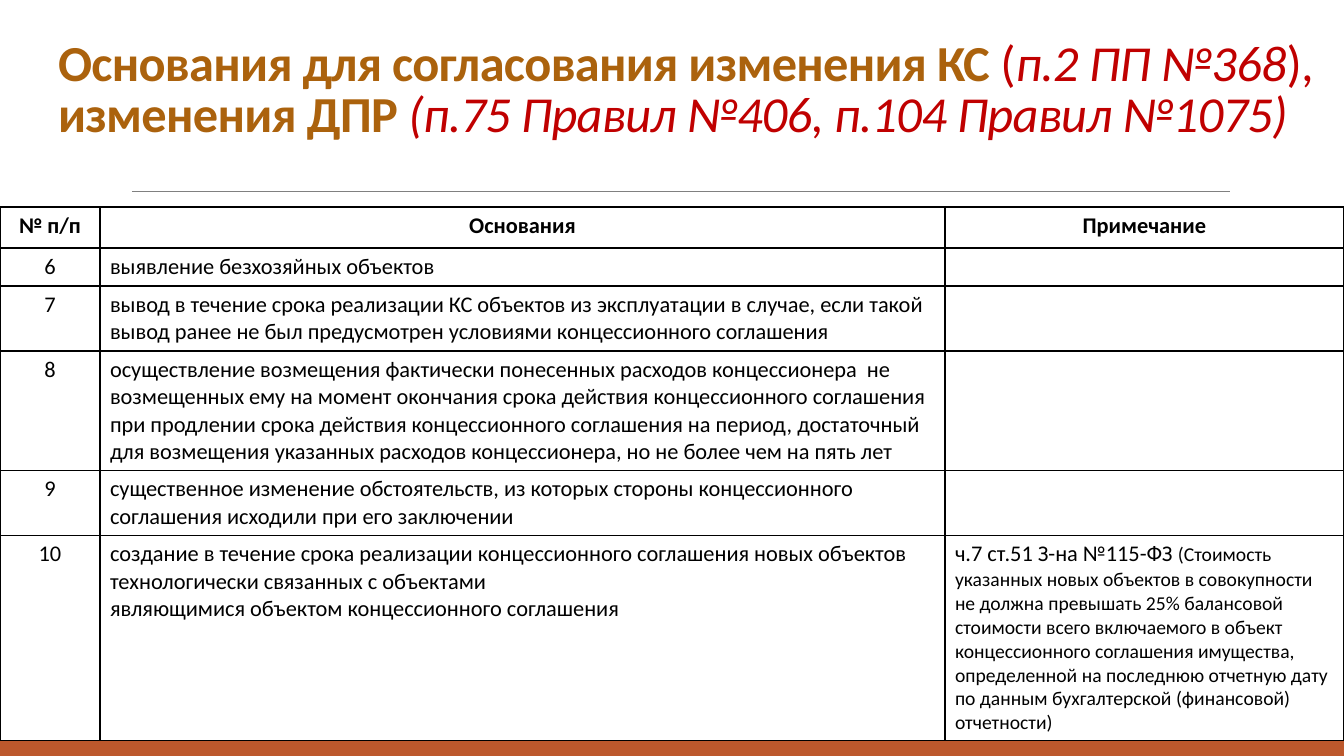
import dataclasses

import lxml.etree
import pptx
import pptx.dml.color
import pptx.enum.shapes
import pptx.enum.text
import pptx.oxml
import pptx.oxml.ns
import pptx.util

EMU_PER_PX = 914400 / 100.8


@dataclasses.dataclass(frozen=True)
class Theme:
    font: str = "Calibri"
    ink: str = "000000"
    paper: str = "FFFFFF"
    brown: str = "AB620D"
    red: str = "C00000"
    rule: str = "808080"
    band: str = "BD582C"
    stripe: str = "E48312"
    title_size: int = 36
    body_size: int = 16
    note_size: int = 14


THEME = Theme()

TITLE_SPANS = [
    ("Основания для согласования изменения КС ", dict(color=THEME.brown, bold=True)),
    ("(", dict(color=THEME.red)),
    ("п.2 ПП №368", dict(color=THEME.red, italic=True)),
    ("), ", dict(color=THEME.red)),
    ("изменения ДПР ", dict(color=THEME.brown, bold=True)),
    ("(п.75 Правил №406, п.104 Правил №1075)", dict(color=THEME.red, italic=True)),
]

COLUMN_WIDTHS = [100, 845, 399]
ROW_HEIGHTS = [41, 38, 65, 119, 65, 205]
HEADERS = ["№ п/п", "Основания", "Примечание"]
FIRST_NUMBER = 6
GROUNDS = [
    ["выявление безхозяйных объектов"],
    ["вывод в течение срока реализации КС объектов из эксплуатации в случае, если такой "
     "вывод ранее не был предусмотрен условиями концессионного соглашения"],
    ["осуществление возмещения фактически понесенных расходов концессионера  не "
     "возмещенных ему на момент окончания срока действия концессионного соглашения "
     "при продлении срока действия концессионного соглашения на период, достаточный "
     "для возмещения указанных расходов концессионера, но не более чем на пять лет"],
    ["существенное изменение обстоятельств, из которых стороны концессионного "
     "соглашения исходили при его заключении"],
    ["создание в течение срока реализации концессионного соглашения новых объектов",
     "технологически связанных с объектами",
     "являющимися объектом концессионного соглашения"],
]
NOTE_LEAD = "ч.7 ст.51 З-на №115-ФЗ "
NOTE_DETAIL = (
    "(Стоимость указанных новых объектов в совокупности не должна превышать 25% "
    "балансовой стоимости всего включаемого в объект концессионного соглашения "
    "имущества, определенной на последнюю отчетную дату по данным бухгалтерской "
    "(финансовой) отчетности)"
)


def px(length):
    return pptx.util.Emu(round(length * EMU_PER_PX))


def rgb(color):
    return pptx.dml.color.RGBColor.from_string(color)


def add_span(para, text, size=THEME.body_size, color=THEME.ink,
             bold=False, italic=False, spacing=None):
    span = para.add_run()
    span.text = text
    span.font.name = THEME.font
    span.font.size = pptx.util.Pt(size)
    span.font.color.rgb = rgb(color)
    span.font.bold = bold
    span.font.italic = italic
    if spacing is not None:
        span.font._element.set("spc", str(round(spacing * 100)))


def add_bar(page, left, top, width, height, color):
    bar = page.shapes.add_shape(
        pptx.enum.shapes.MSO_SHAPE.RECTANGLE, px(left), px(top), px(width), px(height))
    bar.shadow.inherit = False
    bar.fill.solid()
    bar.fill.fore_color.rgb = rgb(color)
    bar.line.fill.background()


def add_rule(page, left, right, top):
    rule = page.shapes.add_connector(
        pptx.enum.shapes.MSO_CONNECTOR.STRAIGHT, px(left), px(top), px(right), px(top))
    rule.line.color.rgb = rgb(THEME.rule)
    rule.line.width = pptx.util.Pt(0.5)
    lxml.etree.SubElement(rule._element.spPr, pptx.oxml.ns.qn("a:effectLst"))


def fill_title(page, left, top, width, height):
    title = page.shapes.title
    title.left, title.top, title.width, title.height = map(px, (left, top, width, height))
    frame = title.text_frame
    frame.word_wrap = True
    frame.auto_size = pptx.enum.text.MSO_AUTO_SIZE.NONE
    frame.vertical_anchor = pptx.enum.text.MSO_ANCHOR.BOTTOM
    para = frame.paragraphs[0]
    para.alignment = pptx.enum.text.PP_ALIGN.LEFT
    para.line_spacing = 0.85
    para.space_before = pptx.util.Pt(0)
    for text, style in TITLE_SPANS:
        add_span(para, text, size=THEME.title_size, spacing=-0.5, **style)


def style_cell(cell):
    cell.fill.solid()
    cell.fill.fore_color.rgb = rgb(THEME.paper)
    properties = cell._tc.get_or_add_tcPr()
    for place, side in enumerate(("lnL", "lnR", "lnT", "lnB")):
        border = pptx.oxml.parse_xml(
            f'<a:{side} {pptx.oxml.ns.nsdecls("a")} w="12700"><a:solidFill>'
            f'<a:srgbClr val="{THEME.ink}"/></a:solidFill></a:{side}>')
        properties.insert(place, border)


def fill_cell(cell, paragraphs, centred=False, bold=False):
    style_cell(cell)
    frame = cell.text_frame
    for index, spans in enumerate(paragraphs):
        para = frame.paragraphs[0] if index == 0 else frame.add_paragraph()
        if centred:
            para.alignment = pptx.enum.text.PP_ALIGN.CENTER
        for text, size in spans:
            add_span(para, text, size=size, bold=bold)
    if not paragraphs:
        ending = frame.paragraphs[0]._p.get_or_add_endParaRPr()
        ending.set("sz", str(THEME.body_size * 100))


def plain(*lines):
    return [[(line, THEME.body_size)] for line in lines]


def add_grounds_table(page, left, top):
    table = page.shapes.add_table(
        len(ROW_HEIGHTS), len(COLUMN_WIDTHS), px(left), px(top),
        px(sum(COLUMN_WIDTHS)), px(sum(ROW_HEIGHTS))).table
    table.first_row = False
    table.horz_banding = False
    for column, width in zip(table.columns, COLUMN_WIDTHS):
        column.width = px(width)
    for row, height in zip(table.rows, ROW_HEIGHTS):
        row.height = px(height)
    for index, header in enumerate(HEADERS):
        fill_cell(table.cell(0, index), plain(header), centred=True, bold=True)
    note = [[(NOTE_LEAD, THEME.body_size), (NOTE_DETAIL, THEME.note_size)]]
    for index, lines in enumerate(GROUNDS, start=1):
        number = str(FIRST_NUMBER + index - 1)
        fill_cell(table.cell(index, 0), plain(number), centred=True)
        fill_cell(table.cell(index, 1), plain(*lines))
        fill_cell(table.cell(index, 2), note if index == len(GROUNDS) else [])


def main():
    deck = pptx.Presentation()
    deck.slide_width, deck.slide_height = px(1344), px(756)
    page = deck.slides.add_slide(deck.slide_layouts.get_by_name("Title Only"))
    page.background.fill.solid()
    page.background.fill.fore_color.rgb = rgb(THEME.paper)
    add_bar(page, 0, 706, 1344, 50, THEME.band)
    add_bar(page, 0, 699, 1344, 7, THEME.stripe)
    add_rule(page, 132, 1230, 191)
    fill_title(page, 48, 31, 1280, 117)
    add_grounds_table(page, 0, 207)
    deck.save("out.pptx")


if __name__ == "__main__":
    main()
